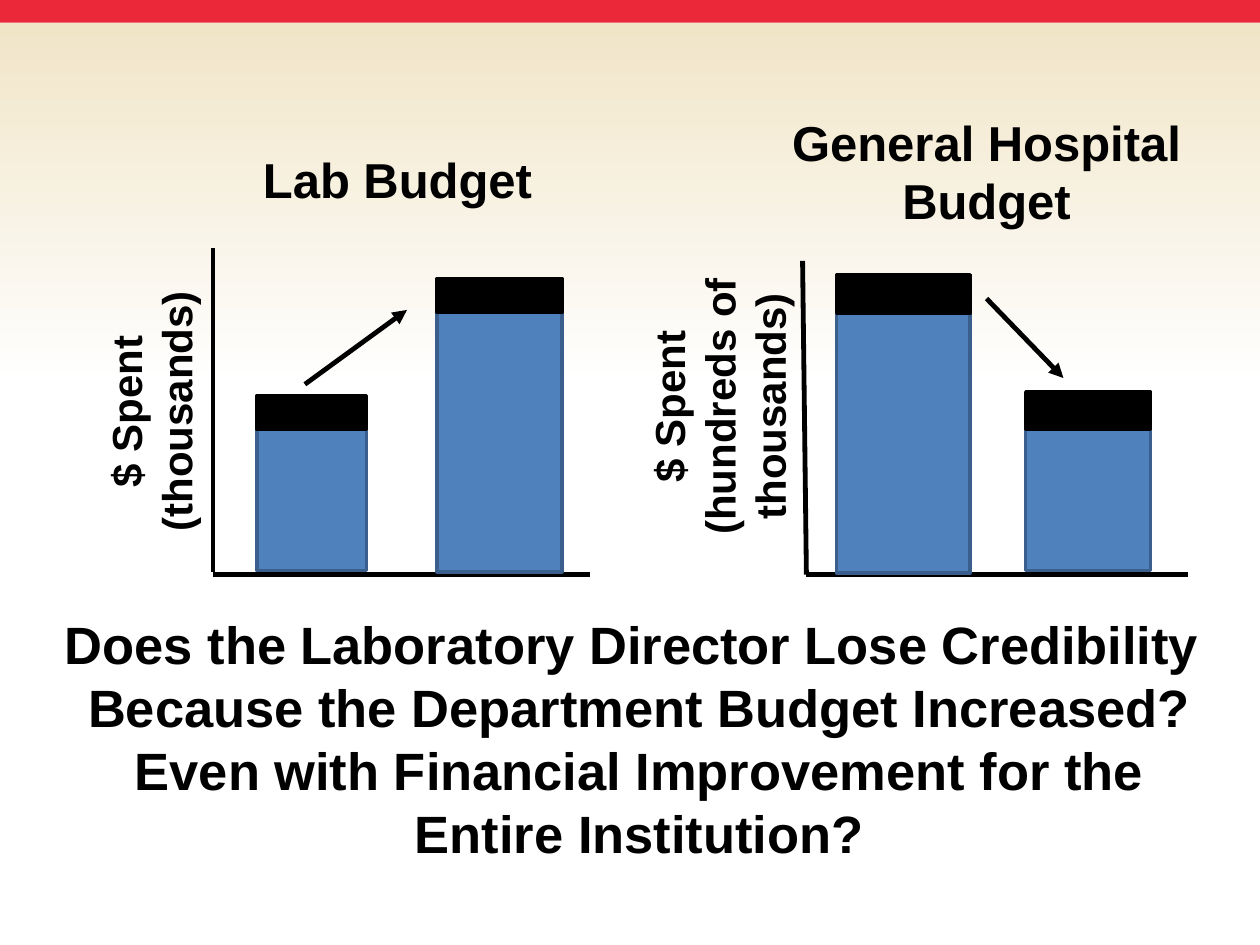
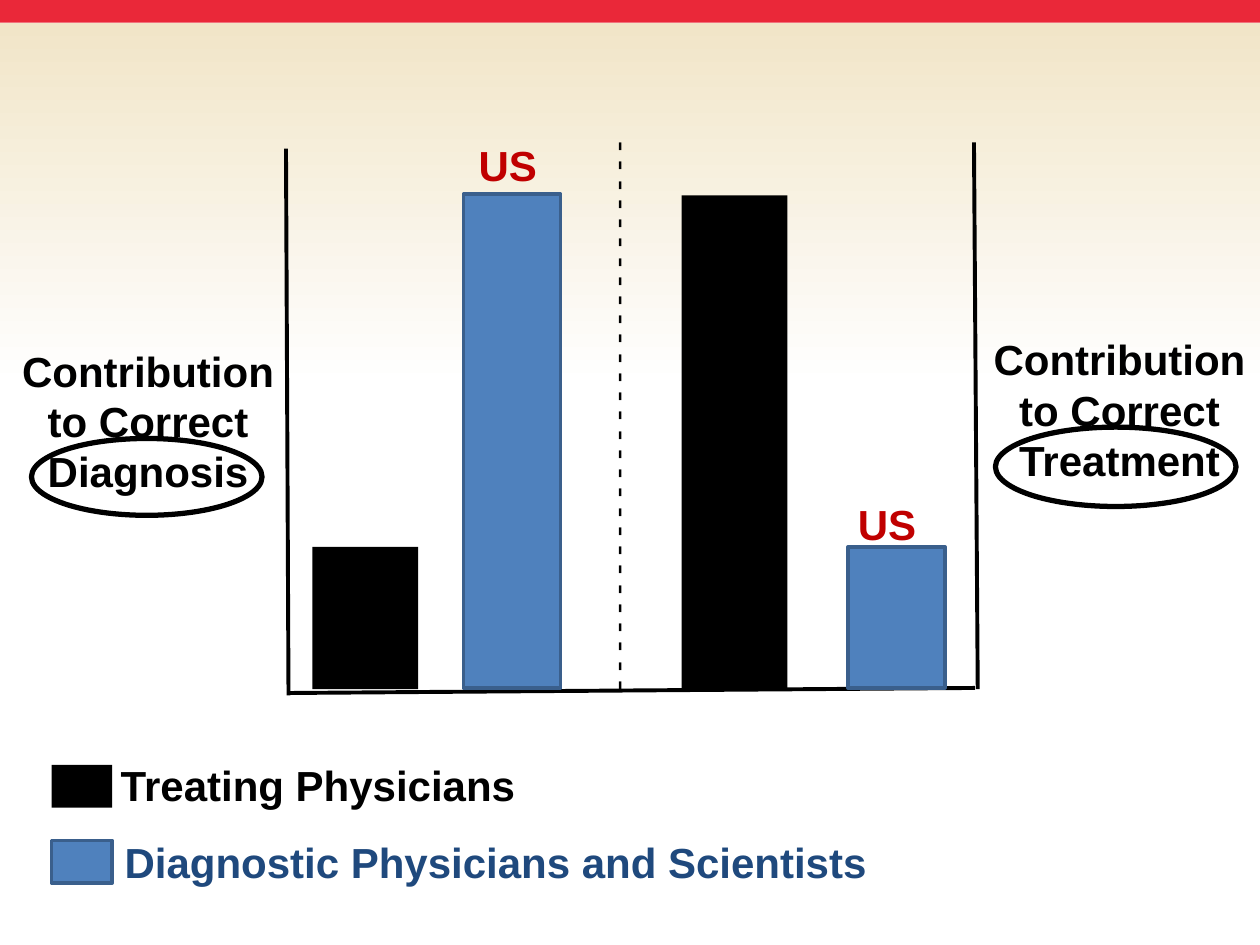
from lxml.etree import SubElement
from pptx import Presentation
from pptx.dml.color import RGBColor
from pptx.enum.shapes import MSO_CONNECTOR as Connector, MSO_SHAPE as Shape
from pptx.enum.text import MSO_AUTO_SIZE as AutoSize, PP_ALIGN as Align
from pptx.oxml.ns import qn
from pptx.util import Pt

PX = 9144
FONT = "Arial"
BLACK = RGBColor(0x00, 0x00, 0x00)
WHITE = RGBColor(0xFF, 0xFF, 0xFF)
CREAM = RGBColor(0xF1, 0xE5, 0xC8)
BAND_RED = RGBColor(0xEA, 0x28, 0x39)
BLUE = RGBColor(0x4F, 0x81, 0xBD)
BLUE_EDGE = RGBColor(0x3A, 0x5F, 0x8C)
NAVY = RGBColor(0x1F, 0x49, 0x7D)
LABEL_RED = RGBColor(0xC0, 0x00, 0x00)


def add_block(slide, box, fill=None, edge=None, width=2, kind=Shape.RECTANGLE):
    shape = slide.shapes.add_shape(kind, *[length * PX for length in box])
    shape.shadow.inherit = False
    if fill is None:
        shape.fill.background()
    else:
        shape.fill.solid()
        shape.fill.fore_color.rgb = fill
    if edge is None:
        shape.line.fill.background()
    else:
        shape.line.color.rgb = edge
        shape.line.width = Pt(width)
    return shape


def add_text(slide, box, lines, size=24, color=BLACK, align=Align.CENTER,
             rotation=0, bold=True, wrap=True):
    shape = slide.shapes.add_textbox(*[length * PX for length in box])
    shape.rotation = rotation
    frame = shape.text_frame
    frame.word_wrap = wrap
    frame.auto_size = AutoSize.SHAPE_TO_FIT_TEXT
    for index, line in enumerate(lines):
        paragraph = frame.add_paragraph() if index else frame.paragraphs[0]
        paragraph.alignment = align
        run = paragraph.add_run()
        run.text = line
        run.font.name = FONT
        run.font.size = Pt(size)
        run.font.bold = bold
        run.font.color.rgb = color


presentation = Presentation()
presentation.slide_width = 1000 * PX
presentation.slide_height = 750 * PX
blank = presentation.slide_layouts[6]
budget_slide = presentation.slides.add_slide(blank)
contribution_slide = presentation.slides.add_slide(blank)

for slide in (budget_slide, contribution_slide):
    backdrop = add_block(slide, (0, 18, 1000, 288), CREAM)
    backdrop.fill.gradient()
    backdrop.fill.gradient_angle = 270
    for stop, color, position in zip(backdrop.fill.gradient_stops, (CREAM, WHITE), (0, 1)):
        stop.color.rgb = color
        stop.position = position
    add_block(slide, (0, 0, 1000, 18), BAND_RED)

for slide, ends, width, arrow in (
    (budget_slide, (169, 197, 169, 454), 2.75, False),
    (budget_slide, (468, 456, 169, 456), 2.75, False),
    (budget_slide, (242, 305, 323, 246), 2.75, True),
    (budget_slide, (637, 207, 640, 456), 2.75, False),
    (budget_slide, (943, 456, 640, 456), 2.75, False),
    (budget_slide, (783, 237, 844, 300), 2.75, True),
    (contribution_slide, (229, 552, 227, 118), 2.25, False),
    (contribution_slide, (229, 550, 774, 546), 2.25, False),
    (contribution_slide, (776, 547, 773, 113), 2.25, False),
):
    connector = slide.shapes.add_connector(Connector.STRAIGHT, *[end * PX for end in ends])
    connector.line.color.rgb = BLACK
    connector.line.width = Pt(width)
    if arrow:
        SubElement(connector.line._get_or_add_ln(), qn("a:tailEnd"), type="triangle")
    SubElement(connector._element.spPr, qn("a:effectLst"))

for left, width, cap_top, top, bottom in (
    (204, 87, 314, 341, 453),
    (347, 99, 221, 248, 454),
    (664, 106, 218, 249, 455),
    (814, 99, 311, 341, 453),
):
    add_block(budget_slide, (left, top, width, bottom - top), BLUE, BLUE_EDGE)
    add_block(budget_slide, (left, cap_top, width, top - cap_top), BLACK, BLACK)

add_text(budget_slide, (166, 114, 299, 57), ["Lab Budget"], 28)
add_text(budget_slide, (618, 84, 330, 104), ["General Hospital Budget"], 28)
add_text(budget_slide, (9, 281, 222, 91), ["$ Spent", "(thousands)"], rotation=270)
add_text(budget_slide, (438, 257, 266, 131), ["$ Spent", "(hundreds of thousands)"], rotation=270)
add_text(budget_slide, (35, 481, 945, 259), [
    "Does the Laboratory Director Lose Credibility ",
    "Because the Department Budget Increased?",
    "Even with Financial Improvement for the Entire Institution?",
], 30)

for box in ((248, 434, 84, 113), (541, 155, 84, 392), (41, 607, 48, 34)):
    add_block(contribution_slide, box, BLACK)
for box in ((368, 154, 77, 392), (673, 434, 77, 112), (41, 667, 48, 34)):
    add_block(contribution_slide, box, BLUE, BLUE_EDGE)

add_text(contribution_slide, (5, 269, 225, 131), ["Contribution ", "to Correct Diagnosis"])
add_text(contribution_slide, (776, 260, 225, 131), ["Contribution ", "to Correct", "Treatment"])
for box in ((25, 348, 183, 61), (790, 339, 191, 63)):
    add_block(contribution_slide, box, edge=BLACK, width=3, kind=Shape.OVAL)

add_text(contribution_slide, (238, 340, 515, 40), [" ".join("-" * 29)], 18,
         align=Align.LEFT, rotation=90, bold=False)
for left, top in ((370, 106), (671, 391)):
    add_text(contribution_slide, (left, top, 67, 50), ["US"], color=LABEL_RED,
             align=Align.LEFT, wrap=False)
add_text(contribution_slide, (86, 598, 425, 51), ["Treating Physicians"], align=Align.LEFT)
add_text(contribution_slide, (89, 659, 615, 51), ["Diagnostic Physicians and Scientists"],
         color=NAVY, align=Align.LEFT)

presentation.save("out.pptx")
